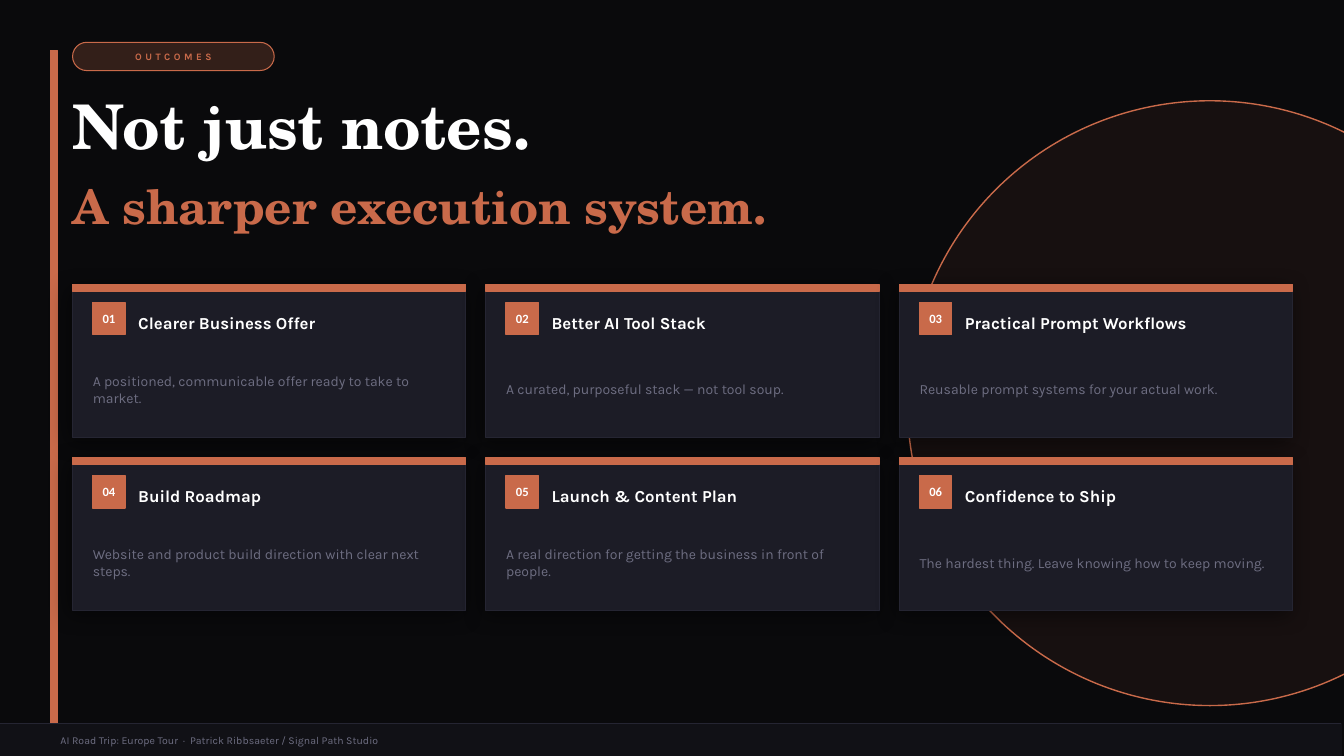
"""Build the Outcomes slide: a headline above a grid of six numbered cards."""
from dataclasses import dataclass

from lxml.etree import SubElement
from pptx import Presentation
from pptx.dml.color import RGBColor
from pptx.enum.shapes import MSO_CONNECTOR, MSO_SHAPE
from pptx.enum.text import MSO_ANCHOR, PP_ALIGN
from pptx.oxml.ns import qn
from pptx.util import Inches, Pt

TAG = "OUTCOMES"
TITLE = "Not just notes."
SUBTITLE = "A sharper execution system."
CARDS = [
    ("Clearer Business Offer", "A positioned, communicable offer ready to take to market."),
    ("Better AI Tool Stack", "A curated, purposeful stack — not tool soup."),
    ("Practical Prompt Workflows", "Reusable prompt systems for your actual work."),
    ("Build Roadmap", "Website and product build direction with clear next steps."),
    ("Launch & Content Plan", "A real direction for getting the business in front of people."),
    ("Confidence to Ship", "The hardest thing. Leave knowing how to keep moving."),
]
FOOTER = "AI Road Trip: Europe Tour  ·  Patrick Ribbsaeter / Signal Path Studio"


@dataclass(frozen=True)
class Theme:
    """Colours, fonts and type sizes."""
    background: str = "0A0A0C"
    accent: str = "C96A4A"
    card: str = "1C1C26"
    border: str = "252532"
    footer: str = "111116"
    white: str = "FFFFFF"
    muted: str = "6E6E82"
    body_font: str = "Karla"
    title_font: str = "TeX Gyre Schola"
    number_font: str = "Calibri"
    title_size: float = 44
    subtitle_size: float = 34
    heading_size: float = 12
    body_size: float = 10
    number_size: float = 9
    footer_size: float = 7.5
    tag_size: float = 7


THEME = Theme()
LEFT = 0.72
GRID_TOP, COLUMNS, GAP = 2.82, 3, 0.2
CARD_WIDTH, CARD_HEIGHT, PADDING = 3.9, 1.52, 0.2
FOOTER_TOP, FOOTER_WIDTH, FOOTER_HEIGHT = 7.18, 13.3, 0.32


def add_block(page, kind, place, fill, line=None, weight=1, opacity=None):
    """Add a filled, outlined shape without a shadow."""
    block = page.shapes.add_shape(kind, *map(Inches, place))
    block.shadow.inherit = False
    block.fill.solid()
    block.fill.fore_color.rgb = RGBColor.from_string(fill)
    block.line.color.rgb = RGBColor.from_string(line or fill)
    block.line.width = Pt(weight)
    if opacity is not None:
        color = block.element.spPr.find(qn("a:solidFill"))[0]
        SubElement(color, qn("a:alpha"), val=str(opacity * 1000))
    return block


def add_shadow(block):
    """Give a card its soft black shadow."""
    effects = block.element.spPr.find(qn("a:effectLst"))
    shadow = SubElement(effects, qn("a:outerShdw"), blurRad=str(Pt(16)), dist=str(Pt(4)),
                        dir=str(135 * 60000), algn="bl", rotWithShape="0")
    color = SubElement(shadow, qn("a:srgbClr"), val="000000")
    SubElement(color, qn("a:alpha"), val="45000")


def write(box, text, size, color, font=THEME.body_font, bold=False,
          align=PP_ALIGN.LEFT, anchor=MSO_ANCHOR.MIDDLE):
    """Set one paragraph in a shape or text box with no insets."""
    frame = box.text_frame
    frame.word_wrap = True
    frame.vertical_anchor = anchor
    frame.margin_left = frame.margin_right = frame.margin_top = frame.margin_bottom = 0
    para = frame.paragraphs[0]
    para.text = text
    para.alignment = align
    para.font.name = font
    para.font.size = Pt(size)
    para.font.bold = bold
    para.font.color.rgb = RGBColor.from_string(color)
    return para


def add_text(page, place, *content, **style):
    """Add a text box holding one paragraph."""
    write(page.shapes.add_textbox(*map(Inches, place)), *content, **style)


def add_header(page):
    """Add the circle, side bar, tag and headlines."""
    add_block(page, MSO_SHAPE.OVAL, (9, 1, 6, 6), THEME.accent, opacity=7)
    add_block(page, MSO_SHAPE.RECTANGLE, (0.5, 0.5, 0.07, 6.68), THEME.accent)
    tag = add_block(page, MSO_SHAPE.ROUNDED_RECTANGLE, (LEFT, 0.42, 2, 0.28),
                    THEME.accent, weight=0.75, opacity=22)
    tag.adjustments[0] = 0.5
    para = write(tag, TAG, THEME.tag_size, THEME.accent, bold=True, align=PP_ALIGN.CENTER)
    para.runs[0].font._element.set("spc", "250")
    add_text(page, (LEFT, 0.87, 8.5, 0.95), TITLE, THEME.title_size, THEME.white,
             font=THEME.title_font, bold=True, anchor=MSO_ANCHOR.TOP)
    add_text(page, (LEFT, 1.76, 9, 0.82), SUBTITLE, THEME.subtitle_size, THEME.accent,
             font=THEME.title_font, bold=True, anchor=MSO_ANCHOR.TOP)


def add_card(page, index, heading, body):
    """Add one numbered card at its place in the grid."""
    row, column = divmod(index, COLUMNS)
    left = LEFT + column * (CARD_WIDTH + GAP)
    top = GRID_TOP + row * (CARD_HEIGHT + GAP)
    inner = left + PADDING
    card = add_block(page, MSO_SHAPE.RECTANGLE, (left, top, CARD_WIDTH, CARD_HEIGHT),
                     THEME.card, THEME.border, 0.75)
    add_shadow(card)
    add_block(page, MSO_SHAPE.RECTANGLE, (left, top, CARD_WIDTH, 0.07), THEME.accent)
    badge = add_block(page, MSO_SHAPE.RECTANGLE, (inner, top + 0.18, 0.32, 0.32), THEME.accent)
    write(badge, f"{index + 1:02}", THEME.number_size, THEME.white,
          font=THEME.number_font, bold=True, align=PP_ALIGN.CENTER)
    add_text(page, (inner + 0.45, top + 0.18, 3.05, 0.4), heading,
             THEME.heading_size, THEME.white, bold=True)
    add_text(page, (inner, top + 0.68, 3.52, 0.72), body, THEME.body_size, THEME.muted)


def add_footer(page):
    """Add the footer band, its rule and its text."""
    add_block(page, MSO_SHAPE.RECTANGLE, (0, FOOTER_TOP, FOOTER_WIDTH, FOOTER_HEIGHT), THEME.footer)
    ends = (0, FOOTER_TOP, FOOTER_WIDTH, FOOTER_TOP)
    rule = page.shapes.add_connector(MSO_CONNECTOR.STRAIGHT, *map(Inches, ends))
    rule.line.color.rgb = RGBColor.from_string(THEME.border)
    rule.line.width = Pt(0.5)
    SubElement(rule._element.spPr, qn("a:effectLst"))
    add_text(page, (0.6, FOOTER_TOP, 12.1, FOOTER_HEIGHT), FOOTER, THEME.footer_size, THEME.muted)


def main():
    """Build and save the deck."""
    deck = Presentation()
    deck.slide_width, deck.slide_height = Inches(13.33), Inches(7.5)
    page = deck.slides.add_slide(deck.slide_layouts[6])
    page.background.fill.solid()
    page.background.fill.fore_color.rgb = RGBColor.from_string(THEME.background)
    add_header(page)
    for index, (heading, body) in enumerate(CARDS):
        add_card(page, index, heading, body)
    add_footer(page)
    deck.save("out.pptx")


if __name__ == "__main__":
    main()
